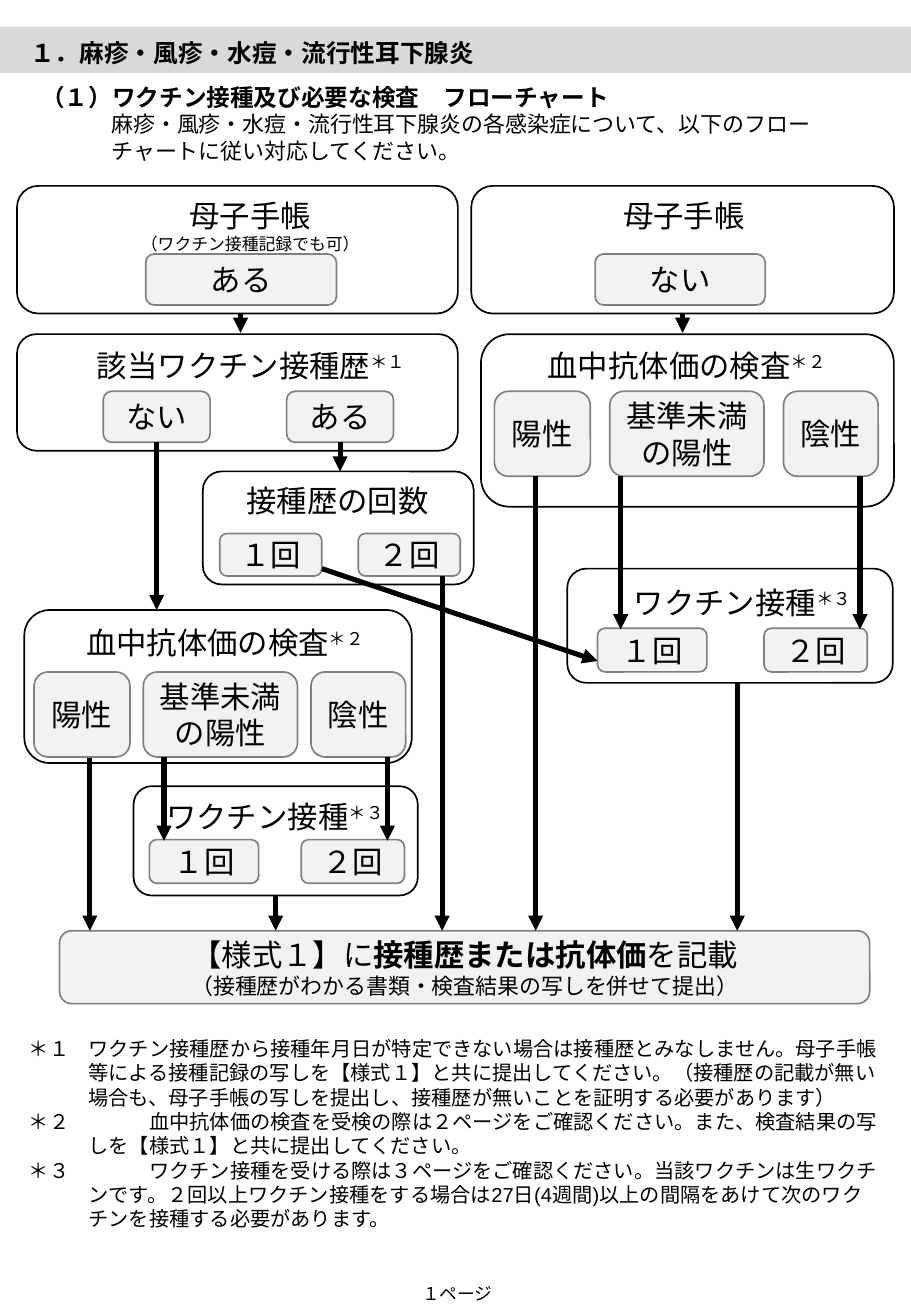
from lxml import etree
from pptx import Presentation
from pptx.dml.color import RGBColor
from pptx.enum.lang import MSO_LANGUAGE_ID
from pptx.enum.shapes import MSO_CONNECTOR, MSO_SHAPE
from pptx.enum.text import MSO_ANCHOR, PP_ALIGN
from pptx.oxml.ns import qn
from pptx.util import Inches, Pt

FONT = "Arial"
BLACK, WHITE, GRAY, PALE, BAND = "000000", "FFFFFF", "808080", "F2F2F2", "D9D9D9"
BOTTOM = 2
FORM_TOP = 7.66

# frame (left, top, width, height), options top and height, options (text, left, width)
PANELS = {
    "handbook": ((0.14, 1.53, 3.63, 1.05), 2.09, 0.42, [("ある", 1.2, 1.57)]),
    "no_handbook": ((3.88, 1.53, 3.48, 1.05), 2.09, 0.42, [("ない", 4.9, 1.4)]),
    "history": ((0.14, 2.75, 3.63, 0.96), 3.22, 0.42,
                [("ない", 0.85, 0.88), ("ある", 2.36, 0.88)]),
    "count": ((1.67, 3.88, 2.23, 0.93), 4.39, 0.35,
              [("１回", 1.81, 0.84), ("２回", 2.95, 0.84)]),
    "test_right": ((3.96, 2.75, 3.4, 1.42), 3.22, 0.7,
                   [("陽性", 4.07, 0.79), ("基準未満の陽性", 5.02, 1.27), ("陰性", 6.45, 0.78)]),
    "vaccine_right": ((4.67, 4.68, 2.68, 0.94), 5.17, 0.36,
                      [("１回", 4.92, 0.9), ("２回", 6.29, 0.85)]),
    "test_left": ((0.2, 5.02, 3.19, 1.26), 5.53, 0.7,
                  [("陽性", 0.28, 0.79), ("基準未満の陽性", 1.18, 1.27), ("陰性", 2.56, 0.78)]),
    "vaccine_left": ((1.1, 6.47, 2.34, 0.9), 6.91, 0.36,
                     [("１回", 1.23, 0.9), ("２回", 2.48, 0.85)]),
}

# text, note mark, left, top
LABELS = [
    ("該当ワクチン接種歴", "＊１", 0.7, 2.81),
    ("接種歴の回数", "", 1.93, 3.92),
    ("血中抗体価の検査", "＊２", 4.41, 2.81),
    ("ワクチン接種", "＊３", 5.12, 4.76),
    ("血中抗体価の検査", "＊２", 0.61, 5.09),
    ("ワクチン接種", "＊３", 1.27, 6.52),
]

# x, top, bottom
DOWN_ARROWS = [
    (1.98, 2.58, 2.74),
    (5.11, 3.92, 5.18),
    (7.08, 3.92, 5.18),
    (1.35, 6.23, 6.92),
    (3.19, 6.23, 6.92),
    (0.74, 6.24, FORM_TOP),
    (3.64, 4.74, FORM_TOP),
    (4.41, 3.92, FORM_TOP),
    (6.07, 5.62, FORM_TOP),
]

# text, tab stop
NOTES = [
    ("＊１\tワクチン接種歴から接種年月日が特定できない場合は接種歴とみなしません。母子手帳等による"
     "接種記録の写しを【様式１】と共に提出してください。（接種歴の記載が無い場合も、母子手帳の写しを"
     "提出し、接種歴が無いことを証明する必要があります）", 0.49),
    ("＊２\t\t血中抗体価の検査を受検の際は２ページをご確認ください。また、検査結果の写しを【様式１】"
     "と共に提出してください。", 0.49),
    ("＊３\t\tワクチン接種を受ける際は３ページをご確認ください。当該ワクチンは生ワクチンです。２回以上"
     "ワクチン接種をする場合は27日(4週間)以上の間隔をあけて次のワクチンを接種する必要があります。", 0.19),
]


def rgb(value):
    return RGBColor.from_string(value)


def write(p, text, size=18, bold=False, raised=False):
    r = p.add_run()
    r.text = text
    r.font.name = FONT
    r.font.size = Pt(size)
    r.font.bold = bold
    r.font.color.rgb = rgb(BLACK)
    r.font.language_id = MSO_LANGUAGE_ID.JAPANESE
    rPr = r.font._element
    etree.SubElement(rPr, qn("a:ea")).set("typeface", FONT)
    if raised:
        rPr.set("baseline", "30000")


def indent(p, left, first=0, tab=None):
    pPr = p._p.get_or_add_pPr()
    pPr.set("marL", str(Inches(left)))
    pPr.set("indent", str(Inches(first)))
    if tab:
        tabs = etree.SubElement(pPr, qn("a:tabLst"))
        etree.SubElement(tabs, qn("a:tab"), pos=str(Inches(tab)), algn="l")


def add_text(s, left, top, width, height, align=PP_ALIGN.LEFT):
    """Add a wrapping text box and return its text frame."""
    tf = s.shapes.add_textbox(*map(Inches, (left, top, width, height))).text_frame
    tf.word_wrap = True
    tf.paragraphs[0].alignment = align
    return tf


def add_box(s, at, fill, line=None, kind=MSO_SHAPE.ROUNDED_RECTANGLE):
    sp = s.shapes.add_shape(kind, *map(Inches, at))
    sp.shadow.inherit = False
    sp.fill.solid()
    sp.fill.fore_color.rgb = rgb(fill)
    if line:
        sp.line.color.rgb = rgb(line)
        sp.line.width = Pt(1)
    else:
        sp.line.fill.background()
    tf = sp.text_frame
    tf.word_wrap = True
    tf.vertical_anchor = MSO_ANCHOR.MIDDLE
    tf.margin_left = tf.margin_right = Inches(0.05)
    tf.paragraphs[0].alignment = PP_ALIGN.CENTER
    return sp


def add_panel(s, frame, top, height, options):
    """Draw a frame with its answer boxes; return all of them, the frame first."""
    shapes = [add_box(s, frame, WHITE, BLACK)]
    for text, left, width in options:
        sp = add_box(s, (left, top, width, height), PALE, GRAY)
        write(sp.text_frame.paragraphs[0], text)
        shapes.append(sp)
    return shapes


def add_arrow(s, x1, y1, x2, y2, source=None):
    c = s.shapes.add_connector(MSO_CONNECTOR.STRAIGHT, *map(Inches, (x1, y1, x2, y2)))
    if source is not None:
        c.begin_connect(source, BOTTOM)
    c.line.color.rgb = rgb(BLACK)
    c.line.width = Pt(3)
    etree.SubElement(c.line._get_or_add_ln(), qn("a:tailEnd"), type="triangle")
    etree.SubElement(c._element.spPr, qn("a:effectLst"))


def add_heading(s):
    add_box(s, (-0.12, 0.22, 7.92, 0.38), BAND, kind=MSO_SHAPE.RECTANGLE)
    tf = add_text(s, 0.15, 0.26, 5.76, 0.35)
    write(tf.paragraphs[0], "１．麻疹・風疹・水痘・流行性耳下腺炎", size=14.6, bold=True)
    tf = add_text(s, 0.24, 0.63, 6.67, 0.77)
    write(tf.paragraphs[0], "（１）ワクチン接種及び必要な検査　フローチャート", size=14, bold=True)
    p = tf.add_paragraph()
    indent(p, 0.58)
    write(p, "麻疹・風疹・水痘・流行性耳下腺炎の各感染症について、以下のフローチャートに従い対応してください。",
          size=13)


def add_labels(s):
    tf = add_text(s, 0.96, 1.57, 2.2, 0.57, PP_ALIGN.CENTER)
    write(tf.paragraphs[0], "母子手帳")
    p = tf.add_paragraph()
    p.alignment = PP_ALIGN.CENTER
    write(p, "（ワクチン接種記録でも可）", size=10)
    write(add_text(s, 4.78, 1.57, 1.7, 0.4, PP_ALIGN.CENTER).paragraphs[0], "母子手帳")
    for text, mark, left, top in LABELS:
        p = add_text(s, left, top, 2.85, 0.4).paragraphs[0]
        write(p, text)
        if mark:
            write(p, mark, raised=True)


def add_form(s):
    tf = add_box(s, (0.49, FORM_TOP, 6.67, 0.6), PALE, GRAY).text_frame
    p = tf.paragraphs[0]
    write(p, "【様式１】に")
    write(p, "接種歴または抗体価", bold=True)
    write(p, "を記載")
    p = tf.add_paragraph()
    p.alignment = PP_ALIGN.CENTER
    write(p, "（接種歴がわかる書類・検査結果の写しを併せて提出）", size=13)


def add_notes(s):
    tf = add_text(s, 0.14, 8.48, 7.21, 1.72)
    for i, (text, tab) in enumerate(NOTES):
        p = tf.add_paragraph() if i else tf.paragraphs[0]
        indent(p, 0.49, -0.49, tab)
        write(p, text, size=12)


def main():
    prs = Presentation()
    prs.slide_width, prs.slide_height = Inches(7.5), Inches(10.83)
    s = prs.slides.add_slide(prs.slide_layouts[6])
    add_heading(s)
    panels = {name: add_panel(s, *panel) for name, panel in PANELS.items()}
    add_labels(s)
    add_form(s)
    add_notes(s)
    for x, top, bottom in DOWN_ARROWS:
        add_arrow(s, x, top, x, bottom)
    add_arrow(s, 5.62, 2.58, 5.62, 2.74, panels["no_handbook"][0])
    add_arrow(s, 1.29, 3.64, 1.29, 5.02, panels["history"][1])
    add_arrow(s, 2.8, 3.64, 2.8, 3.88, panels["history"][2])
    add_arrow(s, 2.27, 7.37, 2.27, FORM_TOP, panels["vaccine_left"][0])
    add_arrow(s, 2.65, 4.68, 4.92, 5.44)
    write(add_text(s, 2.66, 10.51, 2.21, 0.28, PP_ALIGN.CENTER).paragraphs[0], "１ページ", size=10.5)
    prs.save("out.pptx")


if __name__ == "__main__":
    main()
